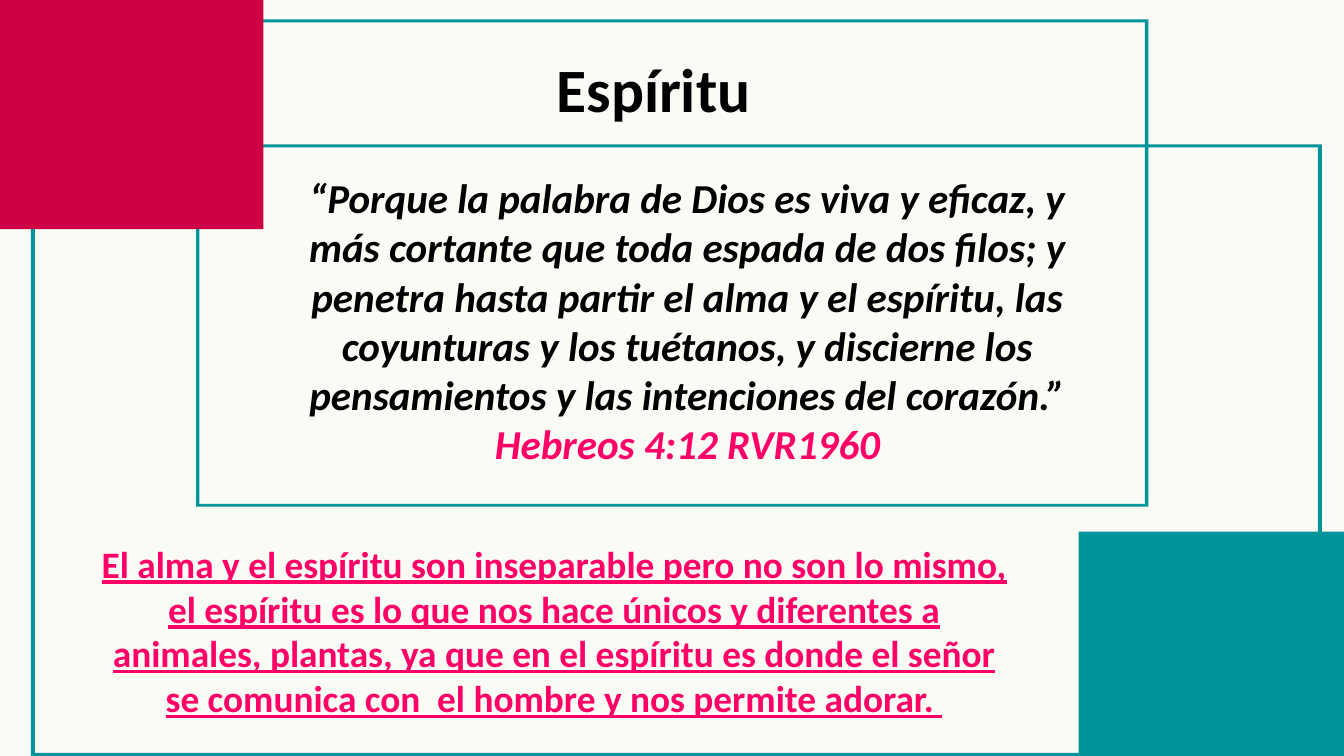
from pptx import Presentation
from pptx.dml.color import RGBColor
from pptx.enum.shapes import MSO_SHAPE
from pptx.enum.text import PP_ALIGN
from pptx.util import Pt

RECT = MSO_SHAPE.RECTANGLE
CENTER = PP_ALIGN.CENTER
TEAL, RED, PINK, BLACK = "01949A", "CD0046", "FF0066", "000000"


def color(value):
    return RGBColor.from_string(value)


def add_text(box, text, size, value, italic=False, underline=False):
    tf = s.shapes.add_textbox(*map(Pt, box)).text_frame
    tf.word_wrap = True
    p = tf.paragraphs[0]
    p.alignment = CENTER
    p.font.name, p.font.size, p.font.bold = "Calibri", Pt(size), True
    p.font.italic, p.font.underline = italic, underline
    r = p.add_run()
    r.text = text
    r.font.color.rgb = color(value)
    return p


prs = Presentation()
prs.slide_width, prs.slide_height = Pt(1440), Pt(810)
s = prs.slides.add_slide(prs.slide_layouts[6])
s.background.fill.solid()
s.background.fill.fore_color.rgb = color("FBFBF5")

# Hollow frames: the inner edge runs the other way round to leave a hole
shapes = []
for x, y, w, h, dx, dy in [(33.1, 154.8, 1383.1, 655.2, 4.2, 3.2),
                           (210.2, 20.9, 1020.2, 522, 3.6, 3)]:
    left, top, right, bottom = x + dx, y + dy, x + w - dx, y + h - dy
    outer = [(x, y), (x + w, y), (x + w, y + h), (x, y + h)]
    inner = [(left, top), (left, bottom), (right, bottom), (right, top)]
    outer, inner = ([(Pt(a), Pt(b)) for a, b in edge] for edge in (outer, inner))
    builder = s.shapes.build_freeform(*outer[0])
    builder.add_line_segments(outer[1:])
    builder.move_to(*inner[0])
    builder.add_line_segments(inner[1:])
    shapes.append((builder.convert_to_shape(), TEAL))

for box, value in [((0, 0, 282.2, 245.5), RED), ((1155.6, 569.5, 290.9, 240.5), TEAL)]:
    shapes.append((s.shapes.add_shape(RECT, *map(Pt, box)), value))

for sp, value in shapes:
    sp.shadow.inherit = False
    sp.fill.solid()
    sp.fill.fore_color.rgb = color(value)
    sp.line.fill.background()

add_text((365.8, 51.1, 684, 87.1), "Espíritu ", 66, BLACK)

verse = add_text(
    (318.2, 181.4, 837.4, 326.9),
    "“Porque la palabra de Dios es viva y eficaz, y más cortante que toda espada "
    "de dos filos; y penetra hasta partir el alma y el espíritu, las coyunturas y "
    "los tuétanos, y discierne los pensamientos y las intenciones del corazón.”",
    44, BLACK, italic=True)
verse.add_line_break()
r = verse.add_run()
r.text = "Hebreos 4:12 RVR1960"
r.font.color.rgb = color(PINK)

add_text(
    (95.8, 576, 995.8, 200.9),
    "El alma y el espíritu son inseparable pero no son lo mismo, el espíritu es lo "
    "que nos hace únicos y diferentes a animales, plantas, ya que en el espíritu es "
    "donde el señor se comunica con  el hombre y nos permite adorar. ",
    40, PINK, underline=True)

prs.save("out.pptx")
